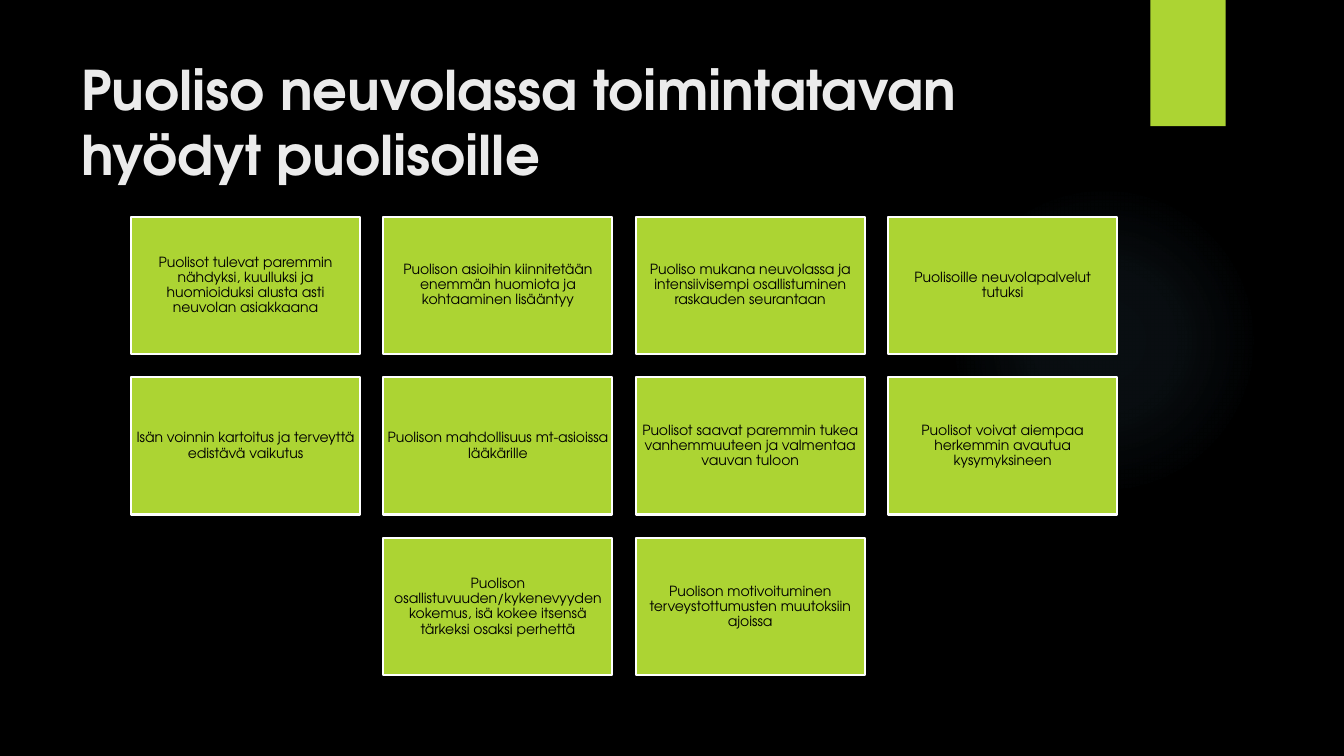
from lxml import etree
from pptx import Presentation, util as u
from pptx.dml.color import RGBColor
from pptx.enum import shapes, text
from pptx.oxml import ns

ROWS = [
    ["Puolisot tulevat paremmin nähdyksi, kuulluksi ja huomioiduksi alusta asti neuvolan asiakkaana",
     "Puolison asioihin kiinnitetään enemmän huomiota ja kohtaaminen lisääntyy",
     "Puoliso mukana neuvolassa ja intensiivisempi osallistuminen raskauden seurantaan",
     "Puolisoille neuvolapalvelut tutuksi"],
    ["Isän voinnin kartoitus ja terveyttä edistävä vaikutus",
     "Puolison mahdollisuus mt-asioissa lääkärille",
     "Puolisot saavat paremmin tukea vanhemmuuteen ja valmentaa vauvan tuloon",
     "Puolisot voivat aiempaa herkemmin avautua kysymyksineen"],
    ["Puolison osallistuvuuden/kykenevyyden kokemus, isä kokee itsensä tärkeksi osaksi perhettä",
     "Puolison motivoituminen terveystottumusten muutoksiin ajoissa"],
]


def tint(code):
    return RGBColor.from_string(code)


def write(frame, words, size, color, bold=False, align=None, anchor=None,
          inset=None, line=None, after=None):
    frame.word_wrap = True
    frame.auto_size = text.MSO_AUTO_SIZE.NONE
    if anchor is not None:
        frame.vertical_anchor = anchor
    if inset is not None:
        frame.margin_left = frame.margin_right = u.Inches(inset)
        frame.margin_top = frame.margin_bottom = u.Inches(inset)
    par = frame.paragraphs[0]
    par.alignment = align
    par.line_spacing = line
    par.space_after = after
    run = par.add_run()
    run.text = words
    run.font.name = Deck.face
    run.font.size = u.Pt(size)
    run.font.bold = bold
    run.font.color.rgb = tint(color)


class Deck:
    face = "TeX Gyre Adventor"
    wide, high = 13.33, 7.5
    left, top = 1.3, 2.15
    step, drop = 2.503, 1.595
    card = 2.27, 1.36
    cols = 4
    lime, white, black, pale, glow = "ACD433", "FFFFFF", "000000", "EBEBEB", "7AC4F0"

    def __init__(self):
        self.show = Presentation()
        self.show.slide_width = u.Inches(self.wide)
        self.show.slide_height = u.Inches(self.high)
        self.slide = self.show.slides.add_slide(self.show.slide_layouts[5])
        back = self.slide.background.fill
        back.solid()
        back.fore_color.rgb = tint(self.black)

    def share(self, x, y, w, h):
        return [u.Inches(part * full) for part, full in
                zip((x, y, w, h), (self.wide, self.high) * 2)]

    def shape(self, kind, box):
        item = self.slide.shapes.add_shape(kind, *box)
        item.shadow.inherit = False
        item.line.fill.background()
        return item

    def block(self, box):
        item = self.shape(shapes.MSO_SHAPE.RECTANGLE, box)
        item.fill.solid()
        item.fill.fore_color.rgb = tint(self.lime)
        return item

    def halo(self, box, stops):
        item = self.shape(shapes.MSO_SHAPE.OVAL, box)
        item.fill.background()
        props = item.fill._xPr
        grad = etree.Element(ns.qn("a:gradFill"))
        props.replace(props.find(ns.qn("a:noFill")), grad)
        marks = etree.SubElement(grad, ns.qn("a:gsLst"))
        for place, alpha in stops:
            mark = etree.SubElement(marks, ns.qn("a:gs"), pos=str(place * 1000))
            color = etree.SubElement(mark, ns.qn("a:srgbClr"), val=self.glow)
            etree.SubElement(color, ns.qn("a:alpha"), val=str(alpha * 1000))
        route = etree.SubElement(grad, ns.qn("a:path"))
        route.set("path", "circle")
        etree.SubElement(route, ns.qn("a:fillToRect"),
                         {side: "50000" for side in "ltrb"})

    def title(self, words, box):
        item = self.slide.shapes.title
        item.left, item.top, item.width, item.height = box
        write(item.text_frame, words, 39, self.pale, bold=True,
              align=text.PP_ALIGN.LEFT, anchor=text.MSO_ANCHOR.TOP)

    def cell(self, col, row, words):
        spot = self.left + col * self.step, self.top + row * self.drop
        item = self.block([u.Inches(size) for size in spot + self.card])
        item.line.color.rgb = tint(self.white)
        item.line.width = u.Pt(1.5)
        write(item.text_frame, words, 10, self.black, inset=0.04, line=0.9,
              after=u.Pt(3.5), align=text.PP_ALIGN.CENTER,
              anchor=text.MSO_ANCHOR.MIDDLE)

    def grid(self, rows):
        for row, items in enumerate(rows):
            start = (self.cols - len(items)) / 2
            for col, words in enumerate(items):
                self.cell(start + col, row, words)


def main():
    deck = Deck()
    deck.halo(deck.share(0.706, 0.244, 0.231, 0.411), [(0, 7), (36, 6), (69, 0)])
    deck.block(deck.share(0.856, 0, 0.056, 0.167))
    deck.title("Puoliso neuvolassa toimintatavan hyödyt puolisoille",
               deck.share(0.053, 0.067, 0.772, 0.204))
    deck.grid(ROWS)
    deck.show.save("out.pptx")


if __name__ == "__main__":
    main()
